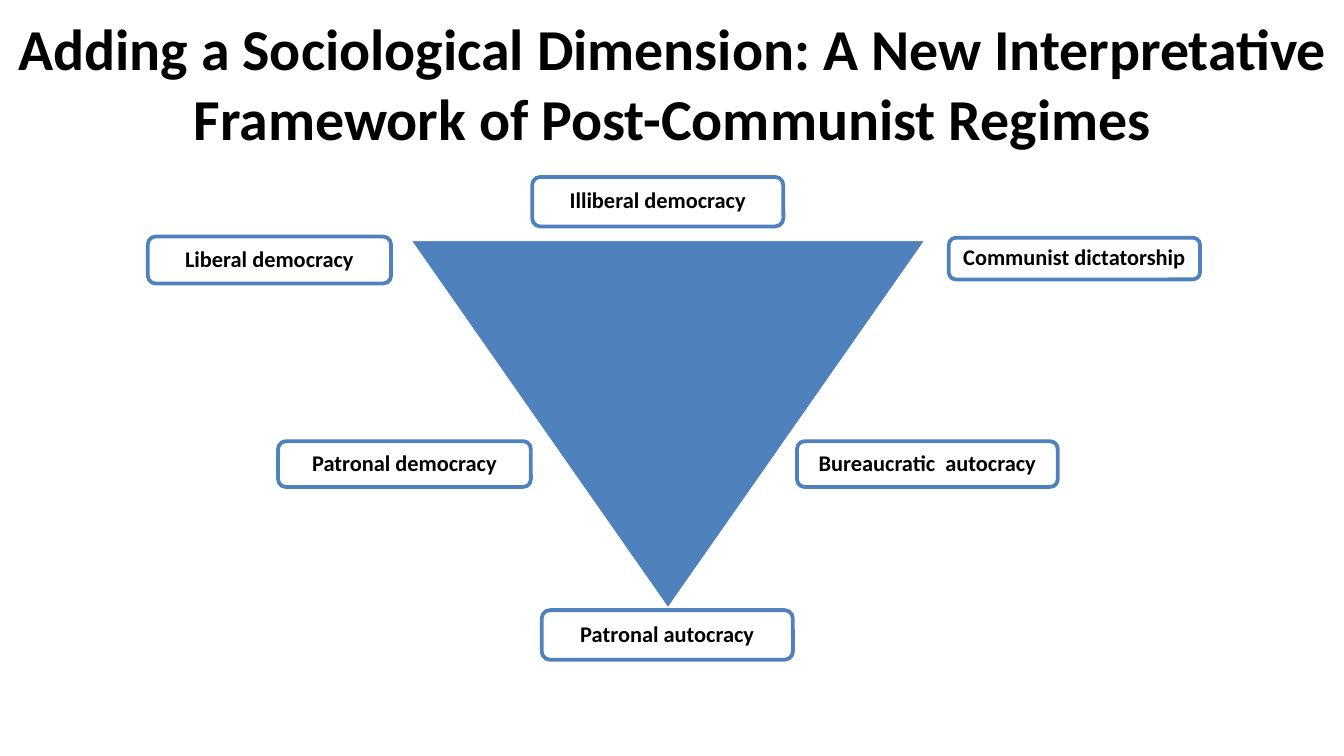
from lxml.etree import SubElement
from pptx import Presentation
from pptx.dml.color import RGBColor
from pptx.enum.shapes import MSO_SHAPE
from pptx.enum.text import MSO_ANCHOR, MSO_AUTO_SIZE, PP_ALIGN
from pptx.oxml.ns import qn
from pptx.util import Pt

COLOURS = {"text": "000000", "accent": "4F81BD", "paper": "FFFFFF"}

# Regime type: left, top, width, height
REGIMES = {
    "Communist dictatorship": (508.3, 127.4, 134.6, 22.3),
    "Liberal democracy": (79.2, 126.7, 130.3, 25.2),
    "Patronal autocracy": (290.2, 326.9, 134.6, 26.6),
    "Illiberal democracy": (285.1, 94.8, 134.6, 26.6),
    "Bureaucratic  autocracy": (427, 236.4, 139.7, 24.5),
    "Patronal democracy": (149, 236.4, 135.4, 24.5),
}


class RegimeSlide:
    font = "Calibri"
    line_width = 2

    def __init__(self, deck):
        self.page = deck.slides.add_slide(deck.slide_layouts[5])

    def colour(self, name):
        return RGBColor.from_string(COLOURS[name])

    def set_text(self, box, text, size, inset):
        frame = box.text_frame
        frame.text = text
        frame.word_wrap = True
        frame.auto_size = MSO_AUTO_SIZE.NONE
        frame.vertical_anchor = MSO_ANCHOR.MIDDLE
        frame.margin_left = frame.margin_right = Pt(inset)
        frame.margin_top = frame.margin_bottom = Pt(3.6)
        para = frame.paragraphs[0]
        para.alignment = PP_ALIGN.CENTER
        span = para.runs[0]
        span.font.name = self.font
        span.font.size = Pt(size)
        span.font.bold = True
        span.font.color.rgb = self.colour("text")
        return para

    def title(self, text, left, top, width, height):
        box = self.page.shapes.title
        box.left, box.top = Pt(left), Pt(top)
        box.width, box.height = Pt(width), Pt(height)
        self.set_text(box, text, 31, 7.2)

    def shape(self, kind, place, fill, line):
        shape = self.page.shapes.add_shape(kind, *map(Pt, place))
        shape.shadow.inherit = False
        shape.fill.solid()
        shape.fill.fore_color.rgb = self.colour(fill)
        shape.line.color.rgb = self.colour(line)
        shape.line.width = Pt(self.line_width)
        return shape

    def triangle(self, *place):
        shape = self.shape(MSO_SHAPE.ISOSCELES_TRIANGLE, place, "accent", "paper")
        shape.rotation = 180

    def label(self, text, place):
        box = self.shape(MSO_SHAPE.ROUNDED_RECTANGLE, place, "paper", "accent")
        # Fill opacity of 90 %
        fill_colour = box.element.spPr.find(qn("a:solidFill"))[0]
        SubElement(fill_colour, qn("a:alpha"), val="90000")
        self.set_text(box, text, 12, 3.6).line_spacing = 0.9


def main():
    deck = Presentation()
    deck.slide_width, deck.slide_height = Pt(720), Pt(405)
    slide = RegimeSlide(deck)

    # Heading
    slide.title(
        "Adding a Sociological Dimension: A New Interpretative "
        "Framework of Post-Communist Regimes", 0, 10, 720, 68)

    # Triangle with the regime types around it
    slide.triangle(218.9, 128.2, 277.9, 198.7)
    for name, place in REGIMES.items():
        slide.label(name, place)

    deck.save("out.pptx")


if __name__ == "__main__":
    main()
